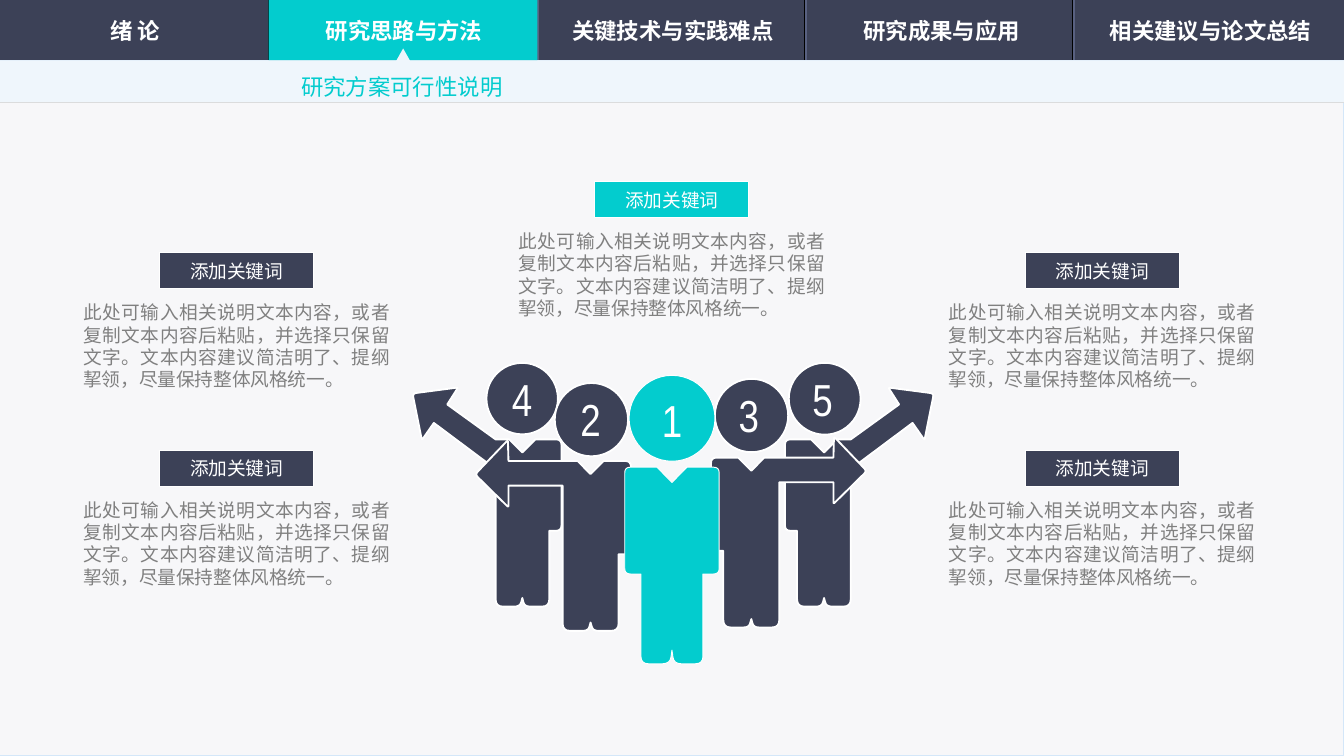
from lxml import etree
from pptx import Presentation
from pptx import util as u
from pptx.dml.color import RGBColor
from pptx.enum import shapes, text
from pptx.oxml import ns

Pt = u.Pt
KIND = shapes.MSO_SHAPE
ALIGN = text.PP_ALIGN
MIDDLE = text.MSO_ANCHOR.MIDDLE
TOP = text.MSO_ANCHOR.TOP
CJK = "Noto Sans CJK SC"

theme = {
    "navy": "3C4157", "teal": "03CCCE", "white": "FFFFFF", "grey": "808080",
    "panel": "F7F7F9", "panel_edge": "D4E7F9", "strip": "EFF6FC",
    "rule": "D9D9D9", "groove_dark": "000000", "groove_light": "596181",
    # text role: colour, font, run format, paragraph format, frame format
    "tab": ("white", CJK, {"size": Pt(12), "bold": True},
            {"alignment": ALIGN.CENTER}, {"vertical_anchor": MIDDLE}),
    "title": ("teal", CJK, {"size": Pt(12), "bold": False},
              {"alignment": ALIGN.LEFT, "line_spacing": 1.5},
              {"vertical_anchor": MIDDLE, "word_wrap": False,
               "auto_size": text.MSO_AUTO_SIZE.SHAPE_TO_FIT_TEXT}),
    "keyword": ("white", "Arial Narrow", {"size": Pt(10)},
                {"alignment": ALIGN.CENTER}, {"vertical_anchor": MIDDLE}),
    "body": ("grey", "Arial", {"size": Pt(10)},
             {"alignment": ALIGN.JUSTIFY, "line_spacing": Pt(12)},
             {"vertical_anchor": TOP, "word_wrap": True, "margin_left": 0,
              "margin_right": 0, "margin_top": 0, "margin_bottom": 0}),
    "number": ("white", "Arial Narrow", {"size": Pt(24)},
               {"alignment": ALIGN.CENTER},
               {"vertical_anchor": TOP, "word_wrap": False, "margin_left": 0,
                "margin_right": 0, "margin_top": 0, "margin_bottom": 0}),
}


def paint(shape, fill, line=None, width=0.5):
    """Give a shape a plain fill and an optional outline."""
    shape.shadow.inherit = False
    shape.fill.solid()
    shape.fill.fore_color.rgb = RGBColor.from_string(theme[fill])
    if line:
        shape.line.color.rgb = RGBColor.from_string(theme[line])
        shape.line.width = Pt(width)
    else:
        shape.line.fill.background()


def write(shape, words, role):
    """Put one paragraph into a shape in the format of its text role."""
    colour, font_name, run_format, paragraph_format, frame_format = theme[role]
    frame = shape.text_frame
    paragraph = frame.paragraphs[0]
    run = paragraph.add_run()
    run.text = words
    run.font.name = font_name
    run.font.color.rgb = RGBColor.from_string(theme[colour])
    for target, values in ((frame, frame_format), (paragraph, paragraph_format),
                           (run.font, run_format)):
        for name, value in values.items():
            setattr(target, name, value)
    east_asian = etree.SubElement(run.font._element, ns.qn("a:ea"))
    east_asian.set("typeface", CJK)


presentation = Presentation()
presentation.slide_width, presentation.slide_height = Pt(720), Pt(405)
slide = presentation.slides.add_slide(presentation.slide_layouts[5])
canvas = slide.shapes

# Navigation bar, content panel and active tab
tab_pitch, bar_height, strip_bottom = 143.6, 32.4, 54.7
for left, top, width, height, fill, line in (
        (0, 0, 720, bar_height, "navy", None),
        (0, bar_height, 720, 405 - bar_height, "panel", "panel_edge")):
    shape = canvas.add_shape(KIND.RECTANGLE, Pt(left), Pt(top), Pt(width), Pt(height))
    paint(shape, fill, line)

# Grooves between tabs, and the rule below the title strip
lines = [(0, strip_bottom, 720, strip_bottom, "rule", 0.5)]
for index in range(1, 5):
    x = tab_pitch * index
    lines += [(x, 0, x, bar_height, "groove_dark", 0.5),
              (x + 1, 0, x + 1, bar_height, "groove_light", 0.75)]
for x1, y1, x2, y2, colour, width in lines:
    connector = canvas.add_connector(shapes.MSO_CONNECTOR.STRAIGHT,
                                     Pt(x1), Pt(y1), Pt(x2), Pt(y2))
    connector.line.color.rgb = RGBColor.from_string(theme[colour])
    connector.line.width = Pt(width)
    etree.SubElement(connector._element.spPr, ns.qn("a:effectLst"))

active_tab = canvas.add_shape(KIND.RECTANGLE, Pt(144), 0, Pt(144), Pt(bar_height))
paint(active_tab, "teal")

# Title strip with a pointer to the active tab
builder = canvas.build_freeform(Pt(216), Pt(26))
builder.add_line_segments([(Pt(x), Pt(y)) for x, y in (
    (219.6, bar_height), (720, bar_height), (720, strip_bottom),
    (0, strip_bottom), (0, bar_height), (212.4, bar_height))])
paint(builder.convert_to_shape(), "strip")

# Body outlines: x and y from the middle of the collar, then corner radius
back_body = [(58.8, -24.6, 2), (34.4, -27.8, 1), (40.2, -18.7, 0), (14.3, 0, 0),
             (7, 0, 0), (0, 7, 0), (-7, 0, 0), (-21, 0, 3), (-21, 49, 3),
             (-14.5, 49, 0), (-14.5, 89.6, 4), (-1.2, 89.6, 3), (0, 85, 0),
             (1.2, 89.6, 3), (14.3, 89.6, 4), (14.3, 15.9, 0),
             (47.4, -8.8, 0), (53.8, 0.4, 1)]
middle_body = [(61.9, 7.2, 2), (44.3, -11.2, 1), (44, 0, 0), (7, 0, 0), (0, 7, 0),
               (-7, 0, 0), (-21.6, 0, 3), (-21.6, 50, 3), (-15, 50, 0),
               (-15, 91, 4), (-1.2, 91, 3), (0, 86.5, 0), (1.2, 91, 3),
               (15, 91, 4), (15, 13.2, 0), (44, 13.2, 0), (44, 24.8, 1)]
right_half = [(8, 0, 0), (25.3, 0, 3), (25.3, 57.2, 3), (16.6, 57.2, 0),
              (16.6, 105.3, 4), (1, 105.3, 4)]
leader_body = ([(0, 8.2, 0)] + right_half + [(0, 98, 0)]
               + [(-x, y, radius) for x, y, radius in reversed(right_half)])

# People: number, outline, side, collar x and y, head box, number middle and top
people = (
    ("5", back_body, 1, 441.5, 235.4, (422.6, 194.4, 38.5), 440.7, 199.4),
    ("4", back_body, -1, 279.8, 235.4, (260.6, 194.4, 38.3), 279.7, 199.4),
    ("2", middle_body, -1, 316.4, 247, (297.2, 205.2, 39.3), 316.4, 209.7),
    ("3", middle_body, 1, 402.5, 245.2, (383, 203, 39.3), 401.2, 207.9),
    ("1", leader_body, 1, 360, 250.3, (337, 201.1, 46), 360, 210.2),
)
for number, outline, side, collar_x, collar_y, head_box, middle, top in people:
    points = []
    for index, (x, y, radius) in enumerate(outline):
        ends = []
        for near_x, near_y, _ in (outline[index - 1], outline[(index + 1) % len(outline)]):
            distance = ((near_x - x) ** 2 + (near_y - y) ** 2) ** 0.5
            share = min(radius / distance, 0.5)
            ends.append((x + (near_x - x) * share, y + (near_y - y) * share))
        (start_x, start_y), (end_x, end_y) = ends
        for t in (0, 0.25, 0.5, 0.75, 1) if radius else (0,):
            a, b, c = (1 - t) ** 2, 2 * t * (1 - t), t ** 2
            points.append((Pt(collar_x + side * (a * start_x + b * x + c * end_x)),
                           Pt(collar_y + a * start_y + b * y + c * end_y)))
    builder = canvas.build_freeform(*points[0])
    builder.add_line_segments(points[1:])
    body = builder.convert_to_shape()
    left, head_top, size = head_box
    head = canvas.add_shape(KIND.OVAL, Pt(left), Pt(head_top), Pt(size), Pt(size))
    for shape in (head, body):
        if number == "1":
            paint(shape, "teal", "white", 0.5)
        else:
            paint(shape, "navy", "white", 1)
    label = canvas.add_textbox(Pt(middle - 6.25), Pt(top), Pt(12.5), Pt(28.8))
    write(label, number, "number")

# Keyword badges with their descriptions
description = ("此处可输入相关说明文本内容，或者复制文本内容后粘贴，并选择只保留文字。"
               "文本内容建议简洁明了、提纲挈领，尽量保持整体风格统一。")
cards = [(x, y, "navy") for x in (44.6, 508.3) for y in (161.3, 267.1)]
for left, top, fill in cards + [(277.7, 123.1, "teal")]:
    box = canvas.add_textbox(Pt(left), Pt(top), Pt(164.2), Pt(48.2))
    write(box, description, "body")
    badge = canvas.add_shape(KIND.RECTANGLE, Pt(left + 40.9), Pt(top - 25.8),
                             Pt(82.6), Pt(19.2))
    paint(badge, fill, "white")
    write(badge, "添加关键词", "keyword")

# Tab labels
for index, name in enumerate(("绪 论", "研究思路与方法", "关键技术与实践难点",
                              "研究成果与应用", "相关建议与论文总结")):
    tab = canvas.add_textbox(Pt(1 + 144 * index), Pt(5), Pt(143), Pt(22.3))
    write(tab, name, "tab")

# Title, brought in front of its strip
title = canvas.title
for name, value in {"left": 154.1, "top": 29.5, "width": 123.8, "height": 26.6}.items():
    setattr(title, name, Pt(value))
write(title, "研究方案可行性说明", "title")
canvas._spTree.append(title._element)

presentation.save("out.pptx")
